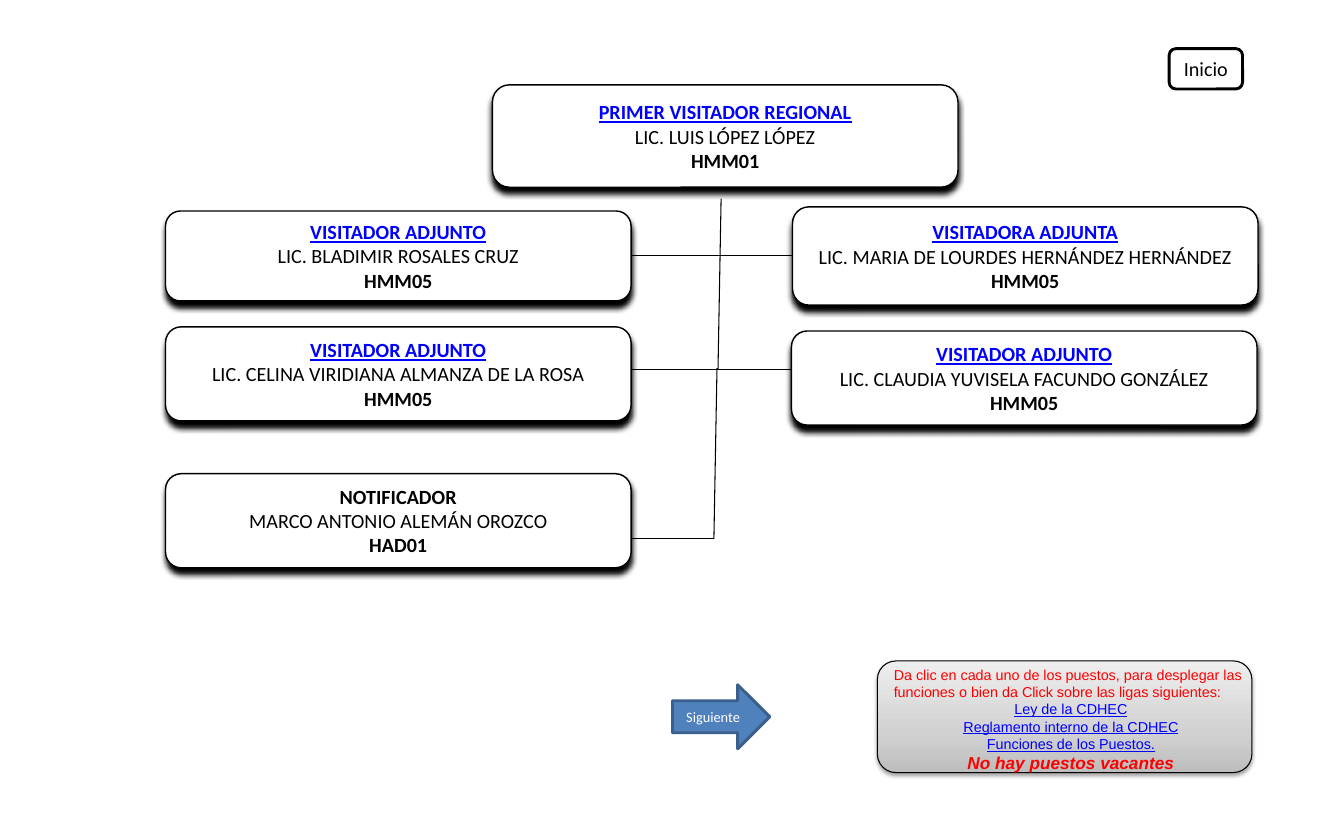
from copy import deepcopy

from lxml.etree import SubElement
from pptx import Presentation
from pptx.dml.color import RGBColor
from pptx.enum.shapes import MSO_CONNECTOR, MSO_SHAPE
from pptx.enum.text import MSO_ANCHOR, MSO_AUTO_SIZE, PP_ALIGN
from pptx.oxml.ns import qn
from pptx.util import Emu, Pt

PX = 9144  # EMU per px, 100 px to the inch

BLACK = RGBColor(0x00, 0x00, 0x00)
WHITE = RGBColor(0xFF, 0xFF, 0xFF)
RED = RGBColor(0xFF, 0x00, 0x00)
LINK = RGBColor(0x00, 0x00, 0xFF)
ARROW = RGBColor(0x4F, 0x81, 0xBD)
ARROW_EDGE = RGBColor(0x3A, 0x5F, 0x8C)
GREYS = [(0, RGBColor(0xBD, 0xBD, 0xBD)),
         (0.35, RGBColor(0xD1, 0xD1, 0xD1)),
         (1, RGBColor(0xEE, 0xEE, 0xEE))]

# Text formats
NAME = dict(name="Calibri", size=Pt(14), color=BLACK)
CODE = dict(NAME, bold=True)
POST = dict(CODE, color=LINK, underline=True)
BUTTON = dict(name="Calibri", size=Pt(10), color=WHITE)
HINT = dict(name="Arial", size=Pt(10), color=RED)
HINT_LINK = dict(HINT, color=LINK, underline=True)
VACANCY = dict(HINT, size=Pt(12), bold=True, italic=True)


class Chart:
    def __init__(self, width, height):
        self.prs = Presentation()
        self.prs.slide_width, self.prs.slide_height = self.px(width, height)
        self.s = self.prs.slides.add_slide(self.prs.slide_layouts[6])

    def px(self, *lengths):
        return [Emu(n * PX) for n in lengths]

    def add_lines(self, tf, lines):
        for i, (text, style) in enumerate(lines):
            p = tf.add_paragraph() if i else tf.paragraphs[0]
            p.alignment = PP_ALIGN.CENTER
            r = p.add_run()
            r.text = text
            for key, value in style.items():
                if key == "color":
                    r.font.color.rgb = value
                else:
                    setattr(r.font, key, value)

    def shape(self, kind, box, fill, edge, weight, lines=()):
        sp = self.s.shapes.add_shape(kind, *self.px(*box))
        sp.shadow.inherit = False
        if fill is not None:
            sp.fill.solid()
            sp.fill.fore_color.rgb = fill
        sp.line.color.rgb = edge
        sp.line.width = Pt(weight)
        sp.text_frame.vertical_anchor = MSO_ANCHOR.MIDDLE
        self.add_lines(sp.text_frame, lines)
        return sp

    def shadow(self, sp, alpha, blur, dist):
        effects = sp._element.spPr.find(qn("a:effectLst"))
        shadow = SubElement(effects, qn("a:outerShdw"), blurRad=str(Pt(blur)),
                            dist=str(Pt(dist)), dir="5400000", rotWithShape="0")
        color = SubElement(shadow, qn("a:srgbClr"), val=str(BLACK))
        SubElement(color, qn("a:alpha"), val=str(alpha * 1000))

    def gradient(self, sp, stops):
        sp.fill.gradient()
        sp.fill.gradient_angle = 90
        gs_list = sp._element.spPr.find(".//" + qn("a:gsLst"))
        gs_list.append(deepcopy(gs_list[0]))
        for stop, (position, color) in zip(sp.fill.gradient_stops, stops):
            stop.position = position
            stop.color.rgb = color

    def post(self, box, title, name, code, title_style=POST):
        lines = [(title, title_style), (name, NAME), (code, CODE)]
        sp = self.shape(MSO_SHAPE.ROUNDED_RECTANGLE, box, WHITE, BLACK, 1, lines)
        tf = sp.text_frame
        tf.word_wrap = False
        tf.margin_left, tf.margin_top, tf.margin_right, tf.margin_bottom = \
            self.px(17, 9, 17, 9)
        self.shadow(sp, 100, 4, 4)

    def line(self, *ends):
        c = self.s.shapes.add_connector(MSO_CONNECTOR.STRAIGHT, *self.px(*ends))
        c.line.color.rgb = BLACK
        c.line.width = Pt(0.75)
        SubElement(c._element.spPr, qn("a:effectLst"))

    def text(self, box, lines):
        tf = self.s.shapes.add_textbox(*self.px(*box)).text_frame
        tf.word_wrap = True
        tf.auto_size = MSO_AUTO_SIZE.SHAPE_TO_FIT_TEXT
        self.add_lines(tf, lines)
        return tf


def main():
    chart = Chart(1299, 788)

    # Connecting lines, behind the boxes
    for ends in [(697, 192, 694, 357), (693, 356, 690, 521),
                 (610, 247, 809, 247), (587, 357, 816, 357),
                 (690, 521, 610, 521)]:
        chart.line(*ends)

    # Posts
    width = 450
    for left, top, height, *words in [
        (476, 82, 99, "PRIMER VISITADOR REGIONAL", "LIC. LUIS LÓPEZ LÓPEZ", "HMM01"),
        (160, 204, 87, "VISITADOR ADJUNTO", "LIC. BLADIMIR ROSALES CRUZ", "HMM05"),
        (766, 200, 95, "VISITADORA ADJUNTA",
         "LIC. MARIA DE LOURDES HERNÁNDEZ HERNÁNDEZ", "HMM05"),
        (160, 316, 91, "VISITADOR ADJUNTO",
         "LIC. CELINA VIRIDIANA ALMANZA DE LA ROSA", "HMM05"),
        (765, 320, 91, "VISITADOR ADJUNTO",
         "LIC. CLAUDIA YUVISELA FACUNDO GONZÁLEZ", "HMM05"),
        (160, 458, 91, "NOTIFICADOR", "MARCO ANTONIO ALEMÁN OROZCO", "HAD01", CODE),
    ]:
        chart.post((left, top, width, height), *words)

    # Navigation buttons
    chart.shape(MSO_SHAPE.ROUNDED_RECTANGLE, (1130, 47, 71, 39), WHITE, BLACK, 2,
                [("Inicio", NAME)])
    chart.shape(MSO_SHAPE.RIGHT_ARROW, (650, 662, 94, 62), ARROW, ARROW_EDGE, 2,
                [("Siguiente", BUTTON)])

    # Instructions panel
    panel = chart.shape(MSO_SHAPE.ROUNDED_RECTANGLE, (848, 639, 362, 108),
                        None, BLACK, 0.75)
    chart.gradient(panel, GREYS)
    chart.shadow(panel, 38, 3.1, 1.6)
    tf = chart.text((854, 639, 362, 114), [
        ("Da clic en cada uno de los puestos, para desplegar las funciones "
         "o bien da Click sobre las ligas siguientes:", HINT),
        ("Ley de la CDHEC", HINT_LINK),
        ("Reglamento interno de la CDHEC", HINT_LINK),
        ("Funciones de los Puestos.", HINT_LINK),
        ("No hay puestos vacantes", VACANCY),
    ])
    tf.paragraphs[0].alignment = PP_ALIGN.LEFT

    chart.prs.save("out.pptx")


if __name__ == "__main__":
    main()
